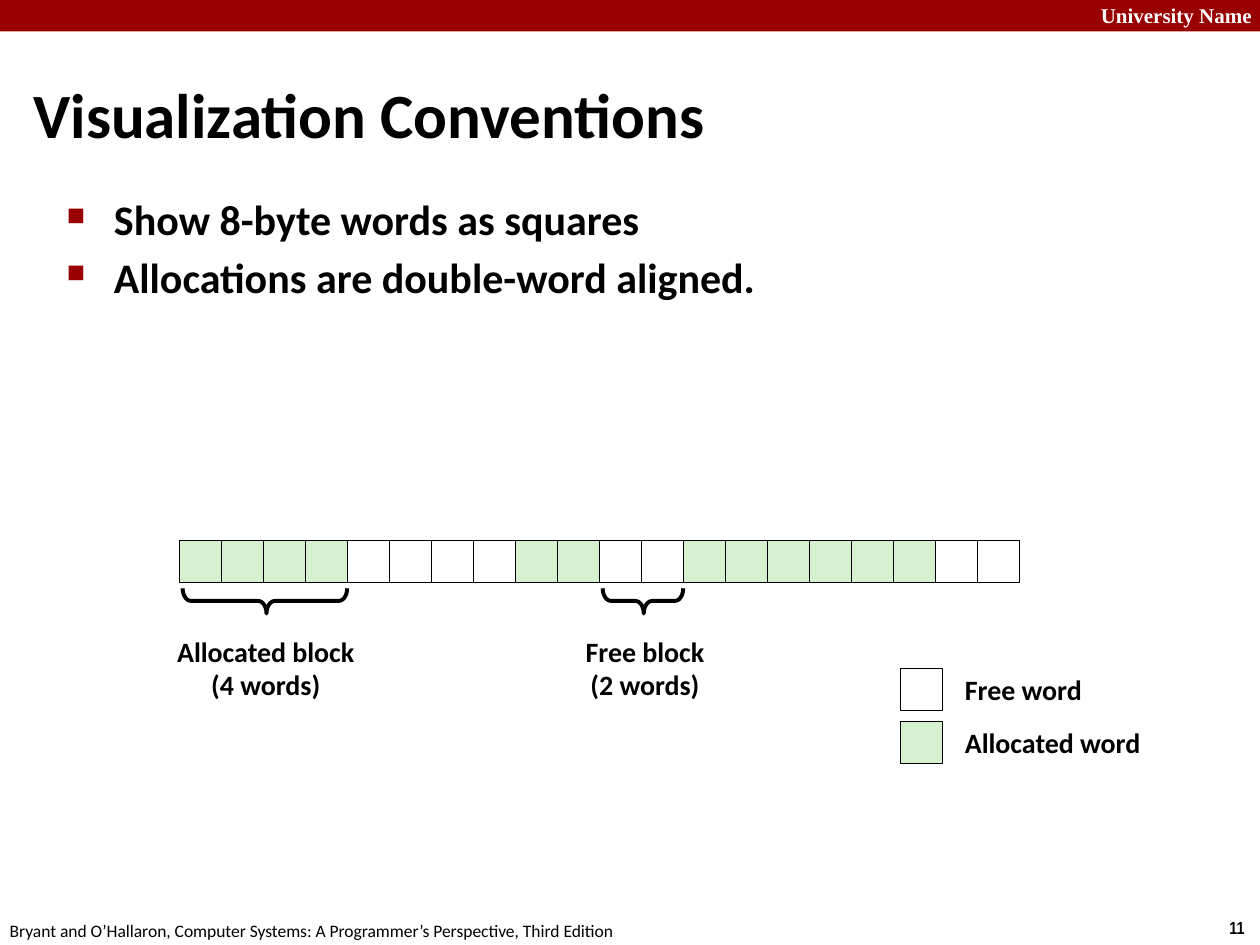
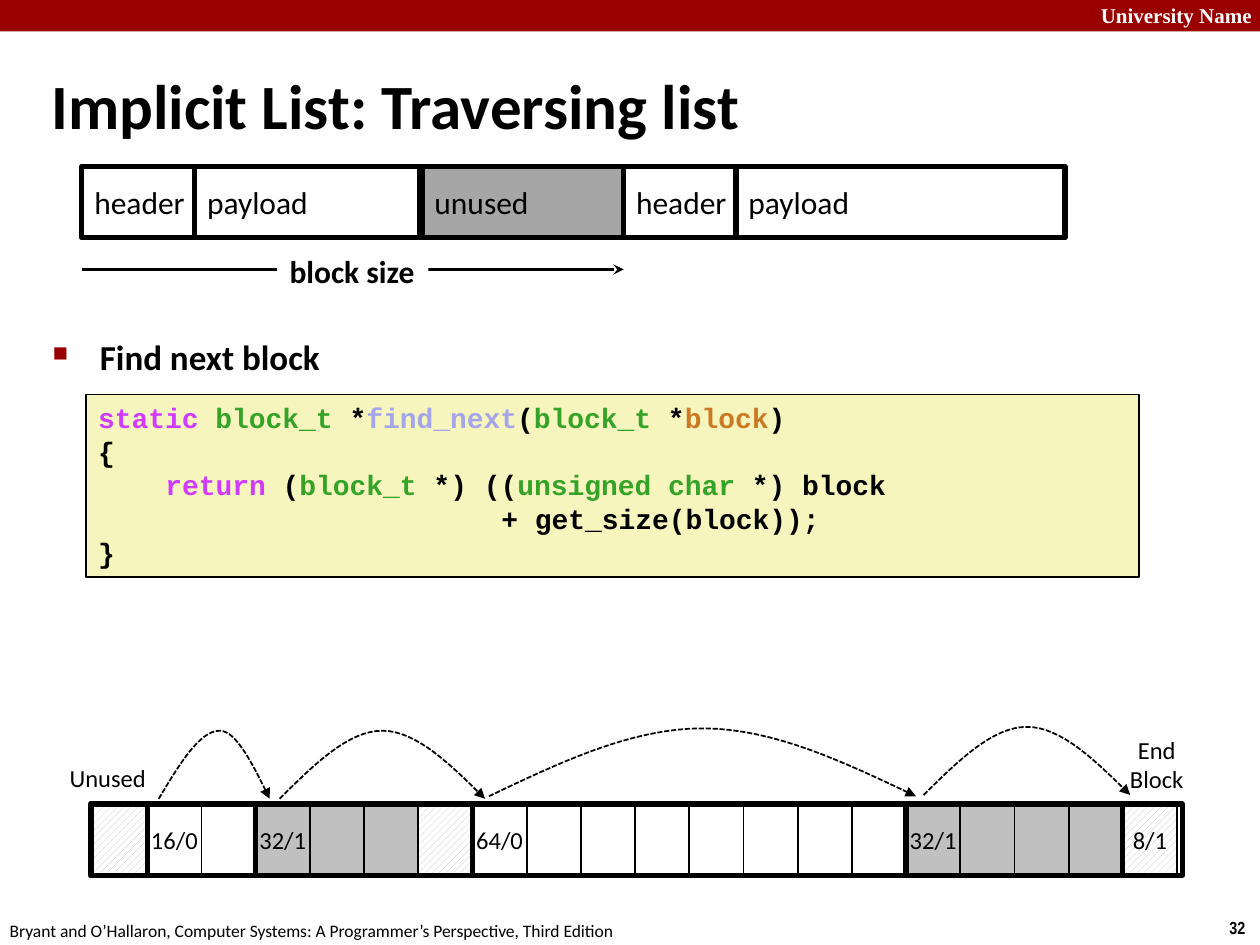
from dataclasses import dataclass
from typing import Any, NamedTuple, Optional

from lxml import etree
from pptx import Presentation
from pptx.dml.color import RGBColor
from pptx.enum.dml import MSO_LINE_DASH_STYLE as Dash, MSO_PATTERN_TYPE as Pattern
from pptx.enum.shapes import MSO_CONNECTOR as Connector, MSO_SHAPE as Shape
from pptx.enum.text import MSO_ANCHOR as Anchor, PP_ALIGN as Align
from pptx.oxml.ns import qn
from pptx.util import Pt


@dataclass(frozen=True)
class Theme:
    red: str = "990000"
    black: str = "000000"
    white: str = "FFFFFF"
    green: str = "D5F1CF"
    grey: str = "C0C0C0"
    dark_grey: str = "A6A6A6"
    cream: str = "F6F5BD"
    keyword: str = "D03BFF"
    type_name: str = "34A327"
    function: str = "A5A5E9"
    variable: str = "CD7923"
    body: str = "Calibri"
    code: str = "Courier New"
    brand: str = "Times New Roman"
    number: str = "Arial Narrow"
    title_size: float = 36
    bullet_size: float = 24
    small_bullet_size: float = 20
    field_size: float = 18
    label_size: float = 16
    word_size: float = 14
    brand_size: float = 12
    footer_size: float = 10


T = Theme()
HATCH = "hatch"


class Area(NamedTuple):
    x: float
    y: float
    w: float
    h: float

    def lengths(self) -> list:
        return [Pt(v) for v in self]


class Run(NamedTuple):
    text: str
    color: str = T.black


class Line(NamedTuple):
    """One paragraph with its left margin and first-line offset."""
    runs: list
    margin: float = 0
    first: float = 0
    bullet: bool = False


@dataclass(frozen=True)
class Style:
    size: float
    bold: bool = False
    font: str = T.body
    color: str = T.black
    align: Any = Align.LEFT
    anchor: Any = Anchor.TOP
    wrap: bool = False
    spacing: Optional[float] = None
    before: float = 0


class Block(NamedTuple):
    """A run of heap words: the fill of each, and the label of the first."""
    label: str
    fills: list
    frame_left: float = 0
    frame_right: float = 0


class Arc(NamedTuple):
    start: float
    end: float
    base: float
    top: float
    peak: float = 0.5


TITLE = Style(T.title_size, bold=True, anchor=Anchor.MIDDLE, wrap=True)
LABEL = Style(T.label_size, bold=True, spacing=0.98)
CENTRED_LABEL = Style(T.label_size, bold=True, spacing=0.98, align=Align.CENTER)
FIELD = Style(T.field_size, anchor=Anchor.MIDDLE)
WORD = Style(T.word_size, align=Align.CENTER, anchor=Anchor.MIDDLE)
CODE = Style(T.label_size, bold=True, font=T.code, wrap=True)


# Drawing helpers
def rgb(color: str) -> RGBColor:
    return RGBColor.from_string(color)


def assign(obj: Any, values: dict) -> None:
    for name, value in values.items():
        setattr(obj, name, value)


def add_bullet(p: Any) -> None:
    pPr = p._p.get_or_add_pPr()
    color = etree.SubElement(pPr, qn("a:buClr"))
    etree.SubElement(color, qn("a:srgbClr"), val=T.red)
    etree.SubElement(pPr, qn("a:buSzPct"), val="60000")
    etree.SubElement(pPr, qn("a:buChar"), char="■")


def write(sp: Any, lines: list, style: Style) -> None:
    tf = sp.text_frame
    assign(tf, {"word_wrap": style.wrap, "vertical_anchor": style.anchor})
    for i, line in enumerate(lines):
        if isinstance(line, str):
            line = Line([Run(line, style.color)])
        p = tf.add_paragraph() if i else tf.paragraphs[0]
        assign(p, {"alignment": style.align, "line_spacing": style.spacing,
                   "space_before": Pt(style.before)})
        if line.margin:
            pPr = p._p.get_or_add_pPr()
            pPr.set("marL", str(Pt(line.margin)))
            pPr.set("indent", str(Pt(line.first)))
        if line.bullet:
            add_bullet(p)
        for run in line.runs:
            r = p.add_run()
            r.text = run.text
            assign(r.font, {"name": style.font, "size": Pt(style.size), "bold": style.bold})
            r.font.color.rgb = rgb(run.color)


def paint(sp: Any, fill: Optional[str], line: float) -> None:
    sp.shadow.inherit = False
    if fill is None:
        sp.fill.background()
    elif fill == HATCH:
        sp.fill.patterned()
        assign(sp.fill, {"pattern": Pattern.WIDE_UPWARD_DIAGONAL})
        sp.fill.fore_color.rgb, sp.fill.back_color.rgb = rgb(T.grey), rgb(T.white)
    else:
        sp.fill.solid()
        sp.fill.fore_color.rgb = rgb(fill)
    if line:
        sp.line.color.rgb = rgb(T.black)
        sp.line.width = Pt(line)
    else:
        sp.line.fill.background()


def box(s: Any, area: Area, fill: Optional[str] = None, line: float = 0,
        lines: Optional[list] = None, style: Style = WORD) -> Any:
    sp = s.shapes.add_shape(Shape.RECTANGLE, *area.lengths())
    paint(sp, fill, line)
    if lines:
        write(sp, lines, style)
    return sp


def text(s: Any, area: Area, lines: list, style: Style) -> None:
    write(s.shapes.add_textbox(*area.lengths()), lines, style)


def add_arrowhead(sp: Any, kind: str) -> None:
    etree.SubElement(sp.line._get_or_add_ln(), qn("a:tailEnd"), type=kind)


def brace(s: Any, middle: float, y: float, span: float) -> None:
    area = Area(middle - 7.2, y - span / 2, 14.4, span)
    sp = s.shapes.add_shape(Shape.LEFT_BRACE, *area.lengths())
    sp.rotation = 270
    sp.adjustments[0], sp.adjustments[1] = 0.33, 0.51
    paint(sp, None, 2.25)


def bezier(points: list, t: float) -> tuple:
    weights = ((1 - t) ** 3, 3 * t * (1 - t) ** 2, 3 * t * t * (1 - t), t ** 3)
    return tuple(Pt(sum(w * pt[axis] for w, pt in zip(weights, points))) for axis in (0, 1))


def jump(s: Any, arc: Arc, steps: int = 16) -> None:
    """A dashed arch that leads from one header to the next."""
    width, middle = arc.end - arc.start, (arc.base + arc.top) / 2
    peak = arc.start + arc.peak * width
    rise, fall = (peak - arc.start) / 3, (arc.end - peak) / 3
    halves = [
        [(arc.start, arc.base), (arc.start + rise, middle), (peak - rise, arc.top), (peak, arc.top)],
        [(peak, arc.top), (peak + fall, arc.top), (arc.end - fall, middle), (arc.end, arc.base)],
    ]
    points = [bezier(half, i / steps) for half in halves for i in range(1, steps + 1)]
    builder = s.shapes.build_freeform(Pt(arc.start), Pt(arc.base))
    builder.add_line_segments(points, close=False)
    sp = builder.convert_to_shape()
    paint(sp, None, 1)
    sp.line.dash_style = Dash.SQUARE_DOT
    add_arrowhead(sp, "triangle")


# Parts shared by the slides
def new_slide(prs: Any, number: int, title: str, title_area: Area) -> Any:
    s = prs.slides.add_slide(prs.slide_layouts[6])
    box(s, Area(0, 0, 720, 18), T.red)
    text(s, Area(622, -2, 103, 21.6), ["University Name"],
         Style(T.brand_size, bold=True, font=T.brand, color=T.white))
    text(s, Area(695.5, 520.5, 24.5, 19.5), [str(number)],
         Style(T.footer_size, bold=True, font=T.number))
    text(s, Area(-1.5, 522, 366, 19.5),
         ["Bryant and O’Hallaron, Computer Systems: A Programmer’s Perspective, Third Edition"],
         Style(T.footer_size))
    text(s, title_area, [Line([Run(title)], 9, -9)], TITLE)
    return s


def bullets(s: Any, area: Area, items: list, style: Style) -> None:
    text(s, area, [Line([Run(item)], 27, -27, True) for item in items], style)


# Slide: words as squares
def conventions_slide(prs: Any) -> None:
    s = new_slide(prs, 11, "Visualization Conventions", Area(12, 34.5, 708, 60))
    bullets(s, Area(31, 107.3, 622, 392),
            ["Show 8-byte words as squares", "Allocations are double-word aligned."],
            Style(T.bullet_size, bold=True, wrap=True, before=4))

    side, left, top = 24, 102.4, 308.9
    fills = [T.green] * 4 + [T.white] * 4 + [T.green] * 2 + [T.white] * 2 + [T.green] * 6 + [T.white] * 2
    for i, fill in enumerate(fills):
        box(s, Area(left + i * side, top, side, side), fill, 0.25)

    for first, count, name, label in (
        (0, 4, "Allocated block", Area(93.6, 360, 116.6, 45.4)),
        (10, 2, "Free block", Area(325.4, 360, 86.4, 45.4)),
    ):
        brace(s, left + (first + count / 2) * side + 1, 343.4, count * side - 2)
        text(s, label, [name, f"({count} words)"], CENTRED_LABEL)

    for row, (name, fill) in enumerate((("Free word", T.white), ("Allocated word", T.green))):
        y = 381.7 + row * 30.2
        box(s, Area(514.3, y, side, side), fill, 0.25)
        text(s, Area(544.3, y, 116, 26.6), [name], LABEL)


# Slide: walking through the heap
def traversing_slide(prs: Any) -> None:
    s = new_slide(prs, 32, "Implicit List: Traversing list", Area(22.3, 36.7, 630, 45.4))
    bullets(s, Area(23, 192.2, 654, 333), ["Find next block"],
            Style(T.small_bullet_size, bold=True, wrap=True, spacing=0.83, before=12.5))

    # Block layout
    for name, x, width, fill in (
        ("header", 46.8, 64.4, None), ("payload", 111.2, 128.5, None),
        ("header", 356.4, 64.4, None), ("payload", 420.6, 188, None),
        ("unused", 241.2, 115.2, T.dark_grey),
    ):
        box(s, Area(x, 95, width, 41), fill, 3, [name], FIELD)
    arrow = s.shapes.add_connector(Connector.STRAIGHT, Pt(46.8), Pt(154), Pt(356.4), Pt(154))
    arrow.line.color.rgb = rgb(T.black)
    arrow.line.width = Pt(2)
    add_arrowhead(arrow, "stealth")
    etree.SubElement(arrow._element.spPr, qn("a:effectLst"))
    box(s, Area(158.4, 140.4, 86.4, 28.8), T.white, 0, ["block size"],
        Style(T.field_size, bold=True))

    # Code
    char = 9.6
    block_t = Run("block_t", T.type_name)
    box(s, Area(49, 225.5, 602, 104.3), T.cream, 1, [
        Line([Run("static ", T.keyword), block_t, Run(" *"), Run("find_next", T.function),
              Run("("), block_t, Run(" *"), Run("block", T.variable), Run(")")]),
        "{",
        Line([Run("return", T.keyword), Run(" ("), block_t, Run(" *) (("),
              Run("unsigned char", T.type_name), Run(" *) block")], 4 * char),
        Line([Run("+ get_size(block));")], 24 * char),
        "}",
    ], CODE)

    # Heap words
    blocks = [
        Block("", [HATCH], frame_left=1.4),
        Block("16/0", [T.white] * 2),
        Block("32/1", [T.grey] * 3 + [HATCH]),
        Block("64/0", [T.white] * 8),
        Block("32/1", [T.grey] * 4),
        Block("8/1", [HATCH], frame_right=3),
    ]
    word, top, height = 30.97, 459.4, 41
    x, frames = 53.2, []
    for block in blocks:
        width = word * len(block.fills)
        frames.append(Area(x - block.frame_left, top,
                           width + block.frame_left + block.frame_right, height))
        for i, fill in enumerate(block.fills):
            label = [block.label] if block.label and not i else None
            box(s, Area(x + i * word, top, word, height), fill, 1, label)
        x += width
    for frame in frames:
        box(s, frame, None, 3)

    # Jumps and end labels
    for arc in (Arc(90.7, 154.1, 456.5, 417.6, 0.55), Arc(159.8, 277.2, 456.5, 417.6),
                Arc(279.4, 523.4, 455, 416.2), Arc(527.8, 645.8, 454.3, 415.4)):
        jump(s, arc)
    text(s, Area(32.4, 432, 58.3, 24.5), ["Unused"], WORD)
    text(s, Area(638, 416.2, 46, 41), ["End", "Block"], WORD)


def main() -> None:
    prs = Presentation()
    assign(prs, {"slide_width": Pt(720), "slide_height": Pt(540)})
    conventions_slide(prs)
    traversing_slide(prs)
    prs.save("out.pptx")


if __name__ == "__main__":
    main()
